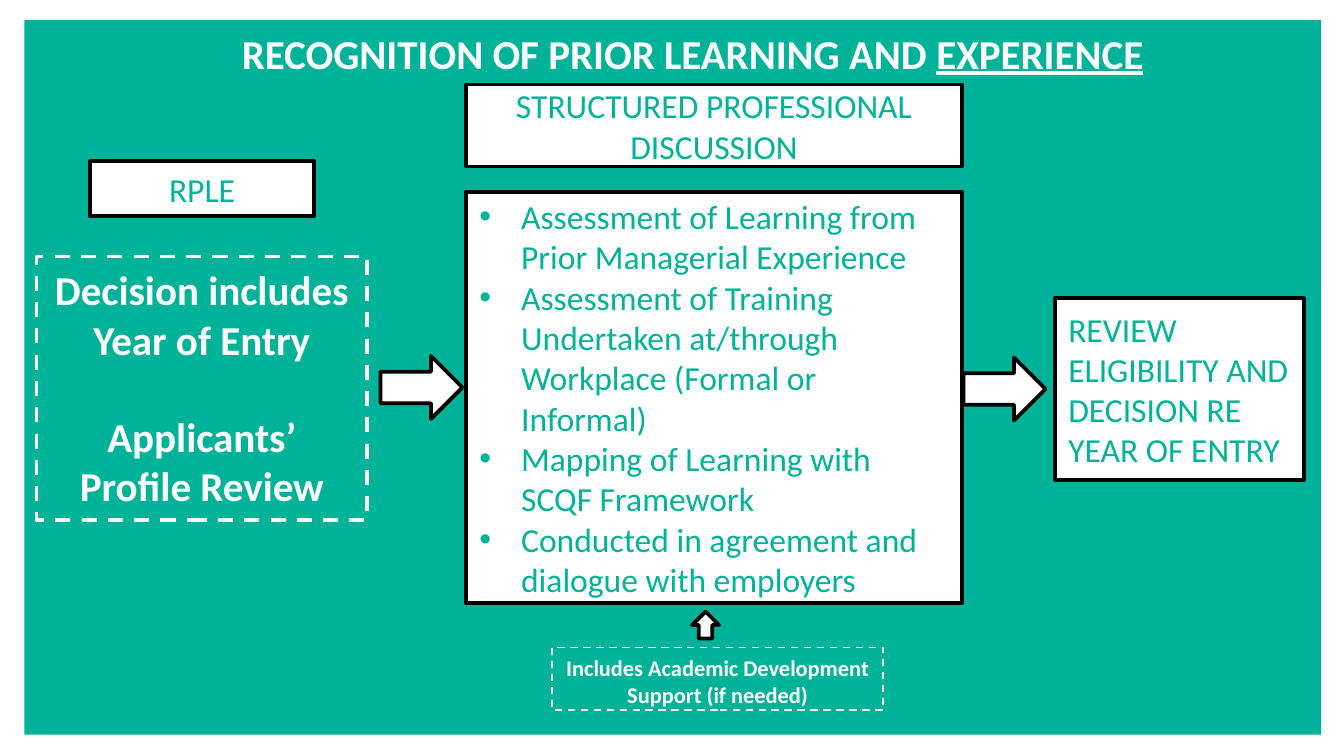
from dataclasses import dataclass
from typing import Optional

from lxml.etree import SubElement
from pptx import Presentation
from pptx.dml.color import RGBColor
from pptx.enum.dml import MSO_LINE
from pptx.enum.shapes import MSO_SHAPE
from pptx.enum.text import MSO_ANCHOR, PP_ALIGN
from pptx.oxml.ns import qn
from pptx.util import Cm, Pt

GREEN = RGBColor(0x00, 0xB3, 0x98)
WHITE = RGBColor(0xFF, 0xFF, 0xFF)
BLACK = RGBColor(0x00, 0x00, 0x00)
FONT = "Calibri"
BULLET_INDENT = Cm(0.79)


@dataclass(frozen=True)
class Place:
    left: float
    top: float
    width: float
    height: float

    def lengths(self) -> tuple:
        return Cm(self.left), Cm(self.top), Cm(self.width), Cm(self.height)


@dataclass(frozen=True)
class TextStyle:
    size: int
    color: RGBColor
    bold: bool = False
    align: PP_ALIGN = PP_ALIGN.CENTER
    bullets: bool = False


@dataclass(frozen=True)
class Panel:
    place: Place
    fill: Optional[RGBColor] = WHITE
    line: Optional[RGBColor] = BLACK
    line_width: int = 2
    dashed: bool = False
    kind: MSO_SHAPE = MSO_SHAPE.RECTANGLE
    rotation: int = 0
    texts: tuple[str, ...] = ()
    style: Optional[TextStyle] = None
    anchor: MSO_ANCHOR = MSO_ANCHOR.MIDDLE


@dataclass(frozen=True)
class Caption:
    place: Place
    spans: tuple[str, ...]
    underline_last: bool = False


HEADING = TextStyle(22, WHITE, bold=True)
LABEL = TextStyle(18, GREEN)
PLAIN = TextStyle(18, GREEN, align=PP_ALIGN.LEFT)
LIST = TextStyle(18, GREEN, align=PP_ALIGN.LEFT, bullets=True)
NOTE = TextStyle(12, WHITE, bold=True)

BACKGROUND = Panel(Place(0.46, 0.38, 24.51, 13.51), fill=GREEN, line=None)
CAPTIONS = (
    Caption(Place(1.14, 0.41, 23.9, 1.19),
            ("RECOGNITION OF PRIOR LEARNING AND ", "EXPERIENCE"), underline_last=True),
    Caption(Place(0.69, 4.88, 6.25, 2.21), ("Decision includes Year of Entry",)),
    Caption(Place(0.69, 7.65, 6.25, 2.21), ("Applicants’ Profile Review",)),
)
PANELS = (
    Panel(Place(0.69, 4.85, 6.25, 4.98), fill=None, line=WHITE, dashed=True),
    Panel(Place(1.7, 3.05, 4.24, 1.04), texts=("RPLE",), style=LABEL),
    Panel(Place(7.19, 6.73, 1.55, 1.19), kind=MSO_SHAPE.RIGHT_ARROW),
    Panel(Place(8.81, 3.63, 9.37, 7.77), style=LIST, texts=(
        "Assessment of Learning from Prior Managerial Experience",
        "Assessment of Training Undertaken at/through Workplace (Formal or Informal)",
        "Mapping of Learning with SCQF Framework",
        "Conducted in agreement and dialogue with employers",
    )),
    Panel(Place(8.81, 1.6, 9.37, 1.55),
          texts=("STRUCTURED PROFESSIONAL DISCUSSION",), style=LABEL),
    Panel(Place(19.94, 5.64, 4.7, 3.43),
          texts=("REVIEW ELIGIBILITY AND DECISION RE YEAR OF ENTRY",), style=PLAIN),
    Panel(Place(18.21, 6.76, 1.55, 1.19), kind=MSO_SHAPE.RIGHT_ARROW),
    Panel(Place(10.44, 12.24, 6.25, 1.19), fill=None, line=WHITE, line_width=1, dashed=True,
          texts=("Includes Academic Development Support (if needed)",), style=NOTE,
          anchor=MSO_ANCHOR.TOP),
    Panel(Place(13.08, 11.56, 0.51, 0.51), kind=MSO_SHAPE.RIGHT_ARROW, rotation=270),
)


def add_span(para, text: str, style: TextStyle):
    """Append one styled run to a paragraph."""
    span = para.add_run()
    span.text = text
    span.font.name = FONT
    span.font.size = Pt(style.size)
    span.font.bold = style.bold
    span.font.color.rgb = style.color
    return span


def add_bullet(para) -> None:
    """Give a paragraph a bullet with a hanging indent."""
    properties = para._p.get_or_add_pPr()
    properties.set("marL", str(BULLET_INDENT))
    properties.set("indent", str(-BULLET_INDENT))
    SubElement(properties, qn("a:buFont"), typeface="Arial")
    SubElement(properties, qn("a:buChar"), char="•")


def draw_panel(page, panel: Panel) -> None:
    """Draw a box or arrow with its text."""
    shape = page.shapes.add_shape(panel.kind, *panel.place.lengths())
    shape.shadow.inherit = False
    shape.rotation = panel.rotation
    if panel.fill is None:
        shape.fill.background()
    else:
        shape.fill.solid()
        shape.fill.fore_color.rgb = panel.fill
    if panel.line is None:
        shape.line.fill.background()
    else:
        shape.line.color.rgb = panel.line
        shape.line.width = Pt(panel.line_width)
    if panel.dashed:
        shape.line.dash_style = MSO_LINE.DASH
    frame = shape.text_frame
    frame.word_wrap = True
    frame.vertical_anchor = panel.anchor
    for index, text in enumerate(panel.texts):
        para = frame.add_paragraph() if index else frame.paragraphs[0]
        para.alignment = panel.style.align
        if panel.style.bullets:
            add_bullet(para)
        add_span(para, text, panel.style)


def draw_caption(page, caption: Caption) -> None:
    """Draw a centred heading in a text box."""
    frame = page.shapes.add_textbox(*caption.place.lengths()).text_frame
    frame.word_wrap = True
    para = frame.paragraphs[0]
    para.alignment = HEADING.align
    spans = [add_span(para, text, HEADING) for text in caption.spans]
    if caption.underline_last:
        spans[-1].font.underline = True


def main() -> None:
    """Build the slide and save the deck."""
    deck = Presentation()
    deck.slide_width, deck.slide_height = Cm(25.4), Cm(14.29)
    page = deck.slides.add_slide(deck.slide_layouts[6])
    draw_panel(page, BACKGROUND)
    for caption in CAPTIONS:
        draw_caption(page, caption)
    for panel in PANELS:
        draw_panel(page, panel)
    deck.save("out.pptx")


if __name__ == "__main__":
    main()
